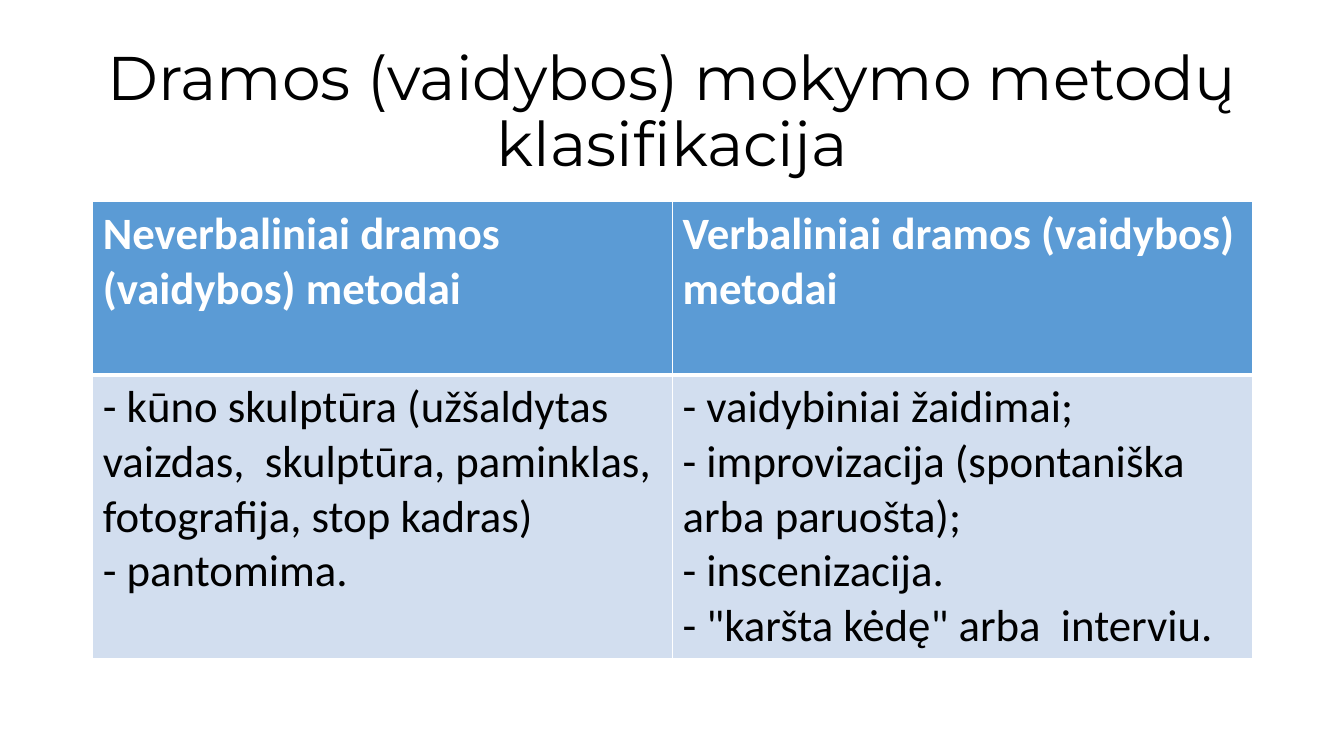
from lxml import etree
from pptx import Presentation
from pptx.dml.color import RGBColor
from pptx.enum.text import MSO_ANCHOR, MSO_AUTO_SIZE, PP_ALIGN
from pptx.oxml.ns import qn
from pptx.util import Inches, Pt

CENTER = PP_ALIGN.CENTER
MIDDLE = MSO_ANCHOR.MIDDLE
NO_AUTOFIT = MSO_AUTO_SIZE.NONE
TITLE_ONLY = 5

LEFT, WIDTH = 0.92, 11.5
BLACK, WHITE = "000000", "FFFFFF"
HEADER_FILL, BODY_FILL = "5B9BD5", "D2DEEF"

TITLE = "Dramos (vaidybos) mokymo metodų klasifikacija"
HEADERS = [
    "Neverbaliniai dramos (vaidybos) metodai",
    "Verbaliniai dramos (vaidybos) metodai",
]
# "\n" starts a paragraph, "\v" breaks a line within one
METHODS = [
    "- kūno skulptūra (užšaldytas vaizdas,  skulptūra, paminklas, "
    "fotografija, stop kadras)\n- pantomima.",
    "- vaidybiniai žaidimai;\n- improvizacija (spontaniška arba paruošta);\n"
    '- inscenizacija.\v- "karšta kėdę" arba  interviu.',
]


def color(value):
    return RGBColor.from_string(value)


def format_runs(tf, font, size, text_color, bold=False):
    for p in tf.paragraphs:
        for r in p.runs:
            r.font.name = font
            r.font.size = Pt(size)
            r.font.bold = bold
            r.font.color.rgb = color(text_color)


def add_title(slide):
    sp = slide.shapes.title
    sp.left, sp.top = Inches(LEFT), Inches(0.4)
    sp.width, sp.height = Inches(WIDTH), Inches(1.45)
    tf = sp.text_frame
    tf.text = TITLE
    tf.word_wrap = True
    tf.auto_size = NO_AUTOFIT
    tf.vertical_anchor = MIDDLE
    p = tf.paragraphs[0]
    p.alignment = CENTER
    p.line_spacing = 0.9
    format_runs(tf, "Montserrat", 44, BLACK)


def set_borders(cell, top, bottom):
    """Draw white borders, one point wide at the sides."""
    tc_pr = cell._tc.get_or_add_tcPr()
    for side, width in (("L", 1), ("R", 1), ("T", top), ("B", bottom)):
        ln = etree.SubElement(tc_pr, qn(f"a:ln{side}"), w=str(Pt(width)))
        fill = etree.SubElement(ln, qn("a:solidFill"))
        etree.SubElement(fill, qn("a:srgbClr"), val=WHITE)


def fill_cell(cell, text, fill, text_color, bold, top, bottom):
    set_borders(cell, top, bottom)
    cell.fill.solid()
    cell.fill.fore_color.rgb = color(fill)
    cell.text_frame.text = text
    format_runs(cell.text_frame, "Calibri", 32, text_color, bold)


def add_methods_table(slide):
    heights = (1.72, 2.81)
    table = slide.shapes.add_table(
        2, 2, Inches(LEFT), Inches(2), Inches(WIDTH), Inches(sum(heights))
    ).table
    for row, height in zip(table.rows, heights):
        row.height = Inches(height)
    for col, (header, methods) in enumerate(zip(HEADERS, METHODS)):
        fill_cell(table.cell(0, col), header, HEADER_FILL, WHITE, True, 1, 3)
        fill_cell(table.cell(1, col), methods, BODY_FILL, BLACK, False, 3, 1)


def main():
    prs = Presentation()
    prs.slide_width, prs.slide_height = Inches(13.33), Inches(7.5)
    slide = prs.slides.add_slide(prs.slide_layouts[TITLE_ONLY])
    add_title(slide)
    add_methods_table(slide)
    prs.save("out.pptx")


if __name__ == "__main__":
    main()
